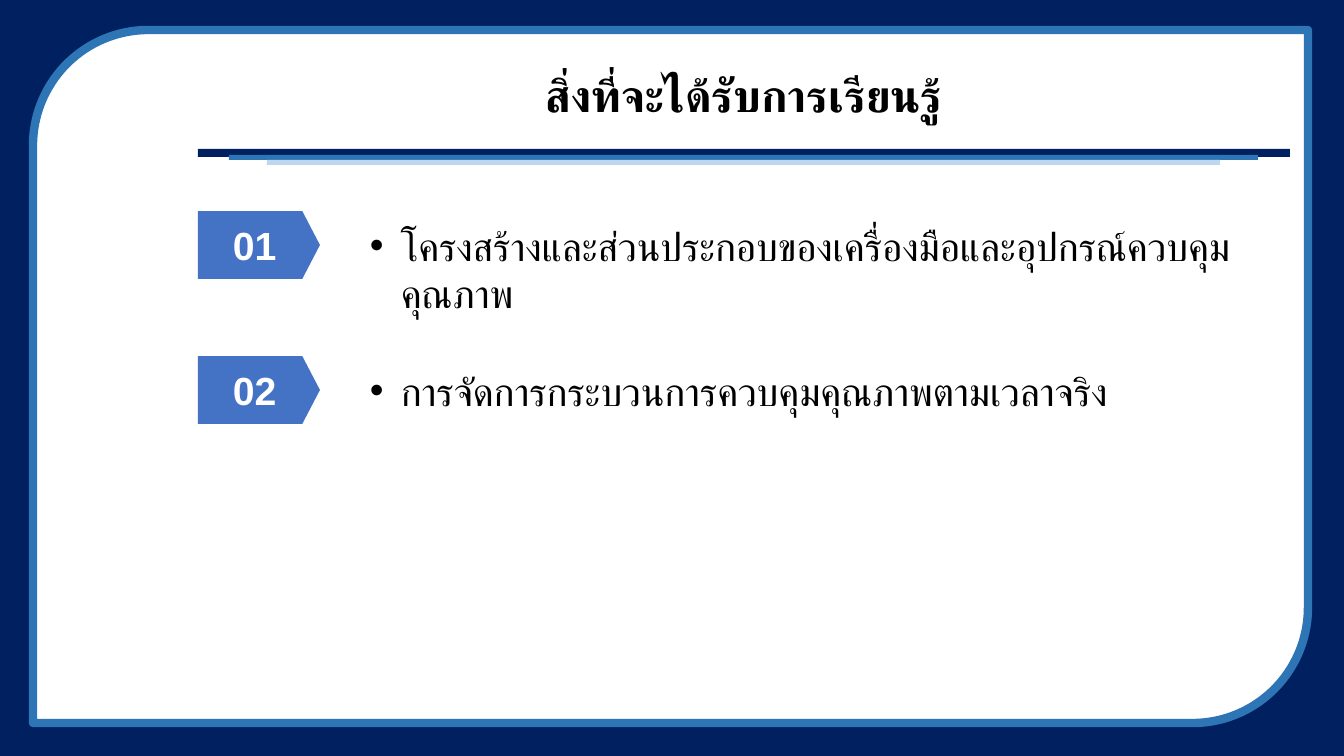
import pptx
import pptx.util
from pptx.dml.color import RGBColor
from pptx.enum.shapes import MSO_SHAPE
from pptx.enum.text import MSO_ANCHOR, MSO_AUTO_SIZE, PP_ALIGN
from lxml import etree

NAVY = RGBColor(0x00, 0x20, 0x60)
BLUE = RGBColor(0x2E, 0x75, 0xB6)
PALE = RGBColor(0xBD, 0xD7, 0xEE)
ROYAL = RGBColor(0x44, 0x72, 0xC4)
WHITE = RGBColor(0xFF, 0xFF, 0xFF)
BLACK = RGBColor(0x00, 0x00, 0x00)

TITLE = "สิ่งที่จะได้รับการเรียนรู้"
TOPICS = [
    "โครงสร้างและส่วนประกอบของเครื่องมือและอุปกรณ์ควบคุมคุณภาพ",
    "การจัดการกระบวนการควบคุมคุณภาพตามเวลาจริง",
]
RULES = [
    ((198, 149, 1092, 8), NAVY),
    ((229, 155, 1029, 5), BLUE),
    ((267, 160, 953, 5), PALE),
]
WIDE, HIGH = 1344, 756
LEFT, TOP, STEP = 198, 211, 145
INDENT = 31
SCALE = 12192000 / WIDE


def emu(px):
    return pptx.util.Emu(round(px * SCALE))


def add_block(shapes, kind, box, fill):
    block = shapes.add_shape(kind, *map(emu, box))
    block.shadow.inherit = False
    block.fill.solid()
    block.fill.fore_color.rgb = fill
    block.line.fill.background()
    return block


def add_text(para, text, face, size, color, bold=False):
    run = para.add_run()
    run.text = text
    font = run.font
    font.name, font.size, font.bold = face, pptx.util.Pt(size), bold
    font.color.rgb = color


def add_bullet(para):
    props = para._p.get_or_add_pPr()
    props.set("marL", str(emu(INDENT)))
    props.set("indent", str(-emu(INDENT)))
    for tag, key, value in (("buFont", "typeface", "Arial"), ("buChar", "char", "•")):
        etree.SubElement(props, pptx.oxml.ns.qn("a:" + tag)).set(key, value)


def add_topic(shapes, index, text):
    top = TOP + index * STEP
    badge = add_block(shapes, MSO_SHAPE.PENTAGON, (LEFT, top, 122, 68), ROYAL)
    badge.adjustments[0] = 0.26
    frame = badge.text_frame
    frame.vertical_anchor = MSO_ANCHOR.MIDDLE
    para = frame.paragraphs[0]
    para.alignment = PP_ALIGN.CENTER
    add_text(para, f"{index + 1:02}", "Arial", 28, WHITE, True)

    frame = shapes.add_textbox(*map(emu, (360, top + 6, 901, 57))).text_frame
    frame.word_wrap = True
    frame.auto_size = MSO_AUTO_SIZE.SHAPE_TO_FIT_TEXT
    para = frame.paragraphs[0]
    add_bullet(para)
    add_text(para, text, "Calibri", 28, BLACK)


def set_title(title):
    title.left, title.top, title.width, title.height = map(emu, (LEFT, 49, 1092, 98))
    frame = title.text_frame
    frame.word_wrap = True
    frame.auto_size = MSO_AUTO_SIZE.NONE
    frame.vertical_anchor = MSO_ANCHOR.MIDDLE
    para = frame.paragraphs[0]
    para.alignment = PP_ALIGN.CENTER
    para.line_spacing = 0.9
    add_text(para, TITLE, "Arial", 32, BLACK, True)


def main():
    deck = pptx.Presentation()
    deck.slide_width, deck.slide_height = emu(WIDE), emu(HIGH)
    slide = deck.slides.add_slide(deck.slide_layouts[5])
    shapes = slide.shapes
    title = shapes.title

    add_block(shapes, MSO_SHAPE.RECTANGLE, (0, 0, WIDE, HIGH), NAVY)
    panel = add_block(shapes, MSO_SHAPE.ROUND_2_DIAG_RECTANGLE, (33, 30, 1275, 693), WHITE)
    panel.line.color.rgb = BLUE
    panel.line.width = pptx.util.Pt(6)
    group = shapes.add_group_shape()
    for box, fill in RULES:
        add_block(group.shapes, MSO_SHAPE.RECTANGLE, box, fill)

    title.element.getparent().append(title.element)
    set_title(title)
    for index, text in enumerate(TOPICS):
        add_topic(shapes, index, text)
    deck.save("out.pptx")


if __name__ == "__main__":
    main()
